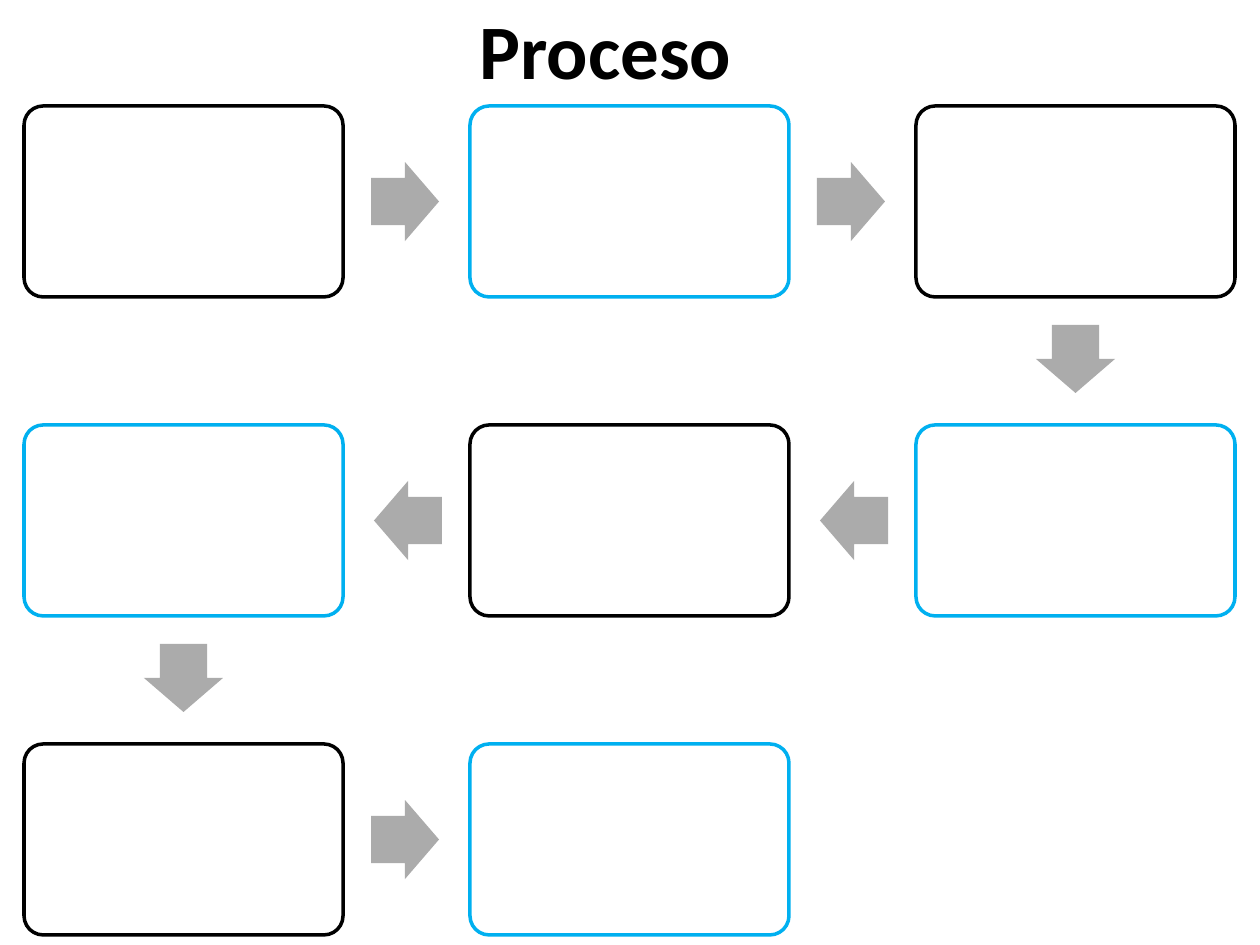
from dataclasses import dataclass

from pptx import Presentation
from pptx import util as u
from pptx.dml.color import RGBColor
from pptx.enum import shapes, text


@dataclass(frozen=True)
class Theme:
    ink: RGBColor = RGBColor(0x00, 0x00, 0x00)
    accent: RGBColor = RGBColor(0x00, 0xB0, 0xF0)
    paper: RGBColor = RGBColor(0xFF, 0xFF, 0xFF)
    arrow: RGBColor = RGBColor(0xAB, 0xAB, 0xAB)
    font: str = "Calibri"
    title_size: int = 44
    outline: int = 2


theme = Theme()
PX = u.Inches(1) // 126


def add_filled(kind, left, top, width, height, color, adjustments):
    shape = page.shapes.add_shape(
        kind, round(left * PX), round(top * PX), width * PX, height * PX)
    shape.shadow.inherit = False
    shape.fill.solid()
    shape.fill.fore_color.rgb = color
    shape.line.fill.background()
    for index, value in enumerate(adjustments):
        shape.adjustments[index] = value
    return shape


deck = Presentation()
deck.slide_width, deck.slide_height = u.Inches(10), u.Inches(7.5)
page = deck.slides.add_slide(deck.slide_layouts[6])

# Title
title = page.shapes.add_textbox(467 * PX, -4 * PX, 280 * PX, 106 * PX)
title.text_frame.word_wrap = False
title.text_frame.auto_size = text.MSO_AUTO_SIZE.SHAPE_TO_FIT_TEXT
span = title.text_frame.paragraphs[0].add_run()
span.text = "Proceso"
span.font.name = theme.font
span.font.size = u.Pt(theme.title_size)
span.font.bold = True
span.font.color.rgb = theme.ink

# Steps snake through the grid: left to right, then right to left
COLUMNS, STEPS = 3, 8
LEFT, TOP = 24, 106
STEP_W, STEP_H = 319, 191
PITCH_X, PITCH_Y = 446, 319
ARROW_W, ARROW_H = 68, 79
ARROW_GAP = 62  # from the step's edge to the arrow's centre

cells = []
for number in range(STEPS):
    row, column = divmod(number, COLUMNS)
    cells.append((row, column if row % 2 == 0 else COLUMNS - 1 - column))

for number, (row, column) in enumerate(cells):
    left, top = LEFT + column * PITCH_X, TOP + row * PITCH_Y
    step = add_filled(shapes.MSO_SHAPE.ROUNDED_RECTANGLE, left, top,
                      STEP_W, STEP_H, theme.paper, [0.1])
    step.line.color.rgb = theme.accent if number % 2 else theme.ink
    step.line.width = u.Pt(theme.outline)

    if number + 1 < STEPS:
        next_row, next_column = cells[number + 1]
        across, down = next_column - column, next_row - row
        center_x = left + STEP_W / 2 + across * (STEP_W / 2 + ARROW_GAP)
        center_y = top + STEP_H / 2 + down * (STEP_H / 2 + ARROW_GAP)
        arrow = add_filled(shapes.MSO_SHAPE.RIGHT_ARROW,
                           center_x - ARROW_W / 2, center_y - ARROW_H / 2,
                           ARROW_W, ARROW_H, theme.arrow, [0.6, 0.5])
        arrow.rotation = 90 if down else (0 if across > 0 else 180)

deck.save("out.pptx")
